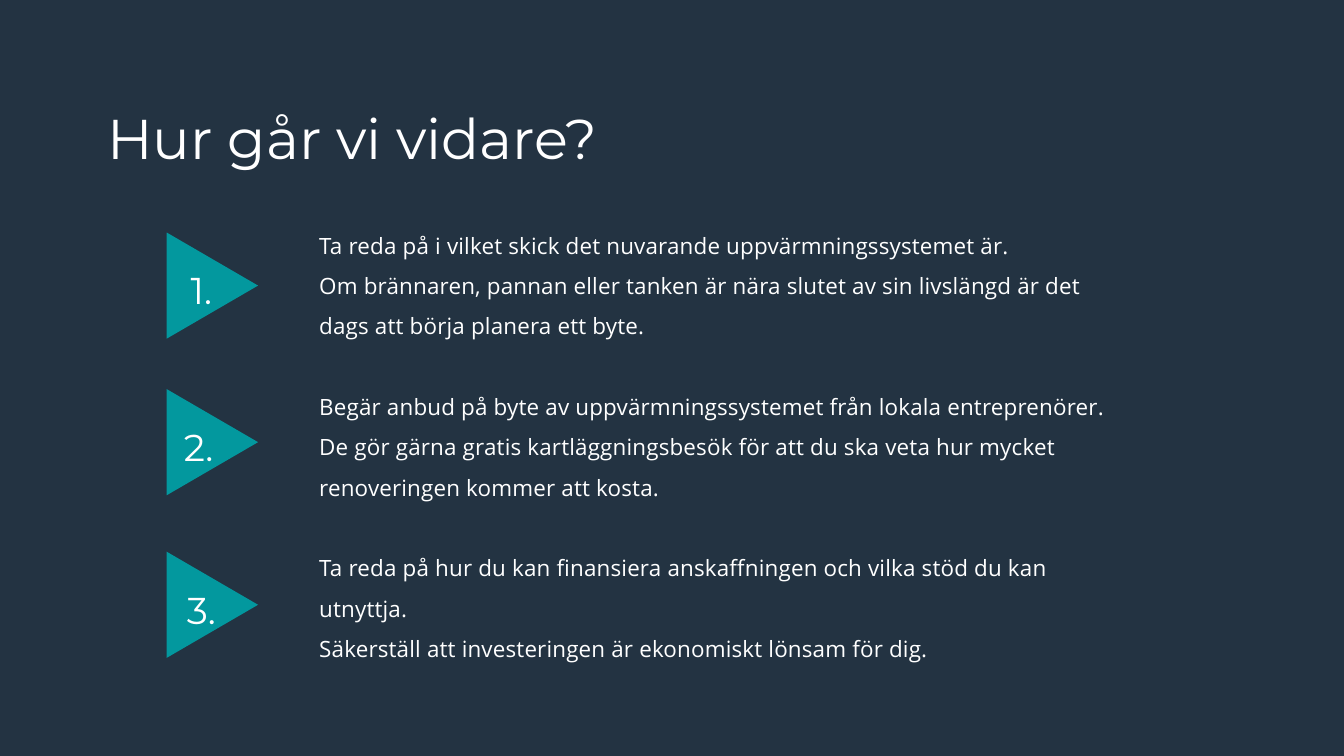
"""Build the slide of three numbered next steps."""
from pptx import Presentation
from pptx.dml.color import RGBColor
from pptx.enum.shapes import MSO_SHAPE
from pptx.enum.text import MSO_ANCHOR, PP_ALIGN
from pptx.util import Inches, Pt

TRIANGLE = MSO_SHAPE.ISOSCELES_TRIANGLE
LEFT, CENTER = PP_ALIGN.LEFT, PP_ALIGN.CENTER
TOP, MIDDLE = MSO_ANCHOR.TOP, MSO_ANCHOR.MIDDLE
NAVY, TEAL, WHITE = "233342", "03989E", "FFFFFF"
HEAD, BODY = "Montserrat", "Open Sans"

TITLE = "Hur går vi vidare?"
STEPS = [
    ("1.", 2.65, 3.57, [
        "Ta reda på i vilket skick det nuvarande uppvärmningssystemet är.",
        "Om brännaren, pannan eller tanken är nära slutet av sin livslängd är det dags att börja planera ett byte.",
    ]),
    ("2.", 2.61, 5.9, [
        "Begär anbud på byte av uppvärmningssystemet från lokala entreprenörer.",
        "De gör gärna gratis kartläggningsbesök för att du ska veta hur mycket renoveringen kommer att kosta.",
    ]),
    ("3.", 2.65, 8.32, [
        "Ta reda på hur du kan finansiera anskaffningen och vilka stöd du kan utnyttja.",
        "Säkerställ att investeringen är ekonomiskt lönsam för dig.",
    ]),
]


def color(code):
    return RGBColor.from_string(code)


def add_text(slide, box, groups, size, font=HEAD, align=LEFT, anchor=TOP,
             pad=(0, 0), line=None, gap=0, track=0):
    frame = slide.shapes.add_textbox(*map(Inches, box)).text_frame
    frame.word_wrap = True
    frame.vertical_anchor = anchor
    frame.margin_left = frame.margin_right = Inches(pad[0])
    frame.margin_top = frame.margin_bottom = Inches(pad[1])
    rows = [(text, i > 0 and j == 0)
            for i, group in enumerate(groups) for j, text in enumerate(group)]
    for n, (text, apart) in enumerate(rows):
        para = frame.add_paragraph() if n else frame.paragraphs[0]
        para.alignment = align
        if line:
            para.line_spacing = line
        if apart:
            para.space_before = Pt(gap)
        run = para.add_run()
        run.text = text
        run.font.name, run.font.size = font, Pt(size)
        run.font.color.rgb = color(WHITE)
        if track:
            run.font._element.set("spc", str(track))


def add_marker(slide, label, left, top):
    mark = slide.shapes.add_shape(
        TRIANGLE, *map(Inches, (2.37, top, 1.58, 1.36)))
    mark.rotation = 90
    mark.shadow.inherit = False
    mark.fill.solid()
    mark.fill.fore_color.rgb = color(TEAL)
    mark.line.fill.background()
    add_text(slide, (left, top + 0.33, 0.69, 0.7), [[label]], 40,
             align=CENTER, line=Pt(53.9))


def main():
    deck = Presentation()
    deck.slide_width, deck.slide_height = Inches(20), Inches(11.25)
    slide = deck.slides.add_slide(deck.slide_layouts[6])
    slide.background.fill.solid()
    slide.background.fill.fore_color.rgb = color(NAVY)
    add_text(slide, (1.5, 1.42, 11.26, 1.25), [[TITLE]], 60,
             anchor=MIDDLE, pad=(0.1, 0.05))
    add_text(slide, (4.75, 3.25, 11.75, 7.21), [step[3] for step in STEPS], 24,
             font=BODY, line=1.5, gap=43.2, track=20)
    for label, left, top, _ in STEPS:
        add_marker(slide, label, left, top)
    deck.save("out.pptx")


if __name__ == "__main__":
    main()
